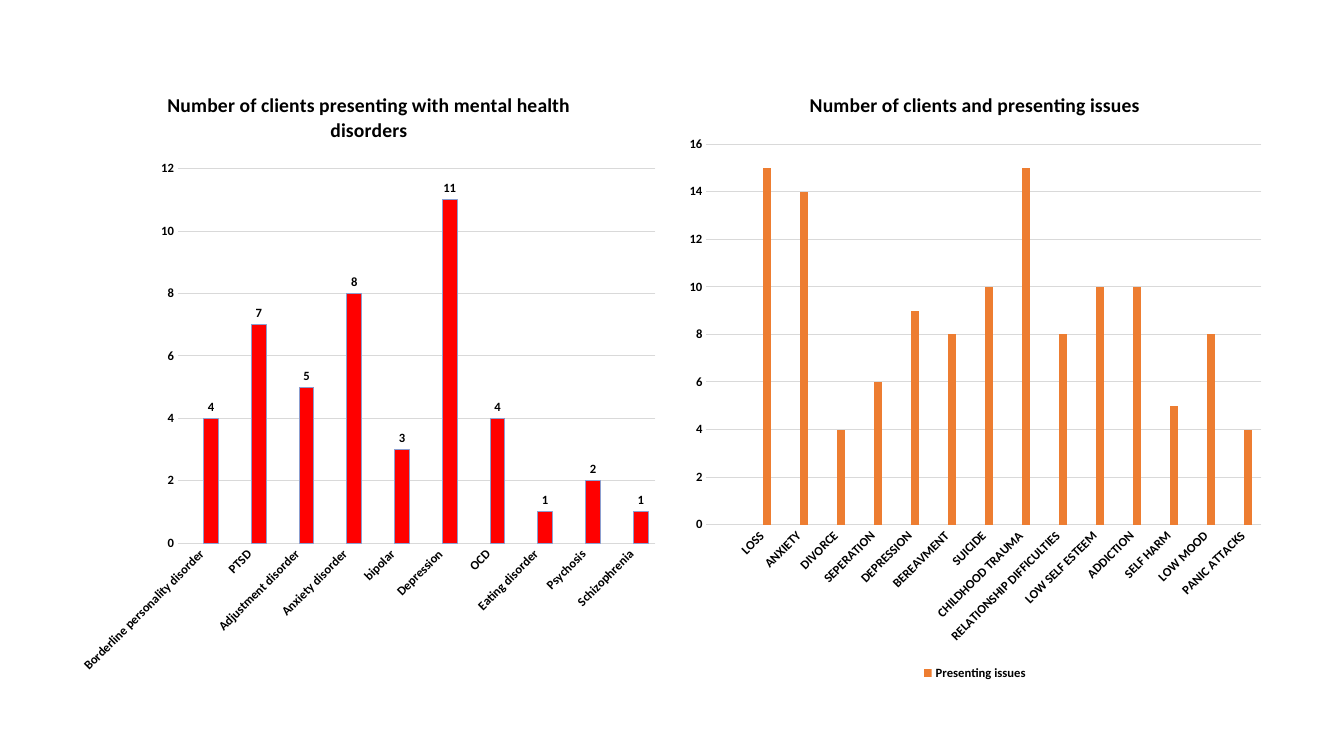
"""Build a slide with two column charts of client disorders and presenting issues."""
import pptx
import pptx.chart.data
import pptx.dml.color
import pptx.enum.chart
import pptx.oxml
import pptx.oxml.ns
import pptx.util

COLORS = {"text": "000000", "grid": "D9D9D9", "red": "FF0000", "orange": "ED7D31",
          "blue": "97A5CF", "outline": "8C9ECF"}
FONT = "Calibri"


def color(name):
    return pptx.dml.color.RGBColor.from_string(COLORS[name])


def style(font, size, bold=True):
    font.name, font.size, font.bold = FONT, pptx.util.Pt(size), bold
    font.color.rgb = color("text")


disorders = {"Borderline personality disorder": 4, "PTSD": 7, "Adjustment disorder": 5,
             "Anxiety disorder": 8, "bipolar": 3, "Depression": 11, "OCD": 4,
             "Eating disorder": 1, "Psychosis": 2, "Schizophrenia": 1}
issues = {"": None, "LOSS": 15, "ANXIETY": 14, "DIVORCE": 4, "SEPERATION": 6,
          "DEPRESSION": 9, "BEREAVMENT": 8, "SUICIDE": 10, "CHILDHOOD TRAUMA": 15,
          "RELATIONSHIP DIFFICULTIES": 8, "LOW SELF ESTEEM": 10, "ADDICTION": 10,
          "SELF HARM": 5, "LOW MOOD": 8, "PANIC ATTACKS": 4}
panels = [
    dict(title="Number of clients presenting with mental health disorders", counts=disorders,
         empty_series="Series 1", fills=("blue", "red"), outline="outline", gap=100,
         overlap=-24, top_value=12, labels=True, legend=False, plot=(0.18, 0.16, 0.8, 0.61)),
    dict(title="Number of clients and presenting issues", counts=issues,
         empty_series="Presenting issues", fills=("orange", "orange"), outline=None, gap=219,
         overlap=-27, top_value=16, labels=False, legend=True, plot=(0.05, 0.12, 0.93, 0.62)),
]

deck = pptx.Presentation()
deck.slide_width, deck.slide_height = pptx.util.Inches(13.33), pptx.util.Inches(7.5)
slide = deck.slides.add_slide(deck.slide_layouts[6])
margin, panel_width, panel_height, pitch = map(pptx.util.Inches, (0.7, 5.92, 6.09, 6.01))

for column, panel in enumerate(panels):
    counts = panel["counts"]
    data = pptx.chart.data.CategoryChartData()
    data.categories = list(counts)
    data.add_series(panel["empty_series"], [None] * len(counts))
    data.add_series("Series 2", list(counts.values()))
    chart = slide.shapes.add_chart(
        pptx.enum.chart.XL_CHART_TYPE.COLUMN_CLUSTERED,
        margin + column * pitch, margin, panel_width, panel_height, data).chart
    style(chart.font, 10, False)

    chart.has_title = True
    title = chart.chart_title.text_frame.paragraphs[0].add_run()
    title.text = panel["title"]
    style(title.font, 14)
    chart.chart_title.include_in_layout = False

    bars = chart.plots[0]
    bars.gap_width, bars.overlap = panel["gap"], panel["overlap"]
    bars.vary_by_categories = False
    for series, fill in zip(bars.series, panel["fills"]):
        series.format.fill.solid()
        series.format.fill.fore_color.rgb = color(fill)
        series.invert_if_negative = False
        if panel["outline"]:
            series.format.line.color.rgb = color(panel["outline"])
            series.format.line.width = pptx.util.Pt(0.75)
        if panel["labels"]:
            series.data_labels.show_value = True
            series.data_labels.position = pptx.enum.chart.XL_LABEL_POSITION.OUTSIDE_END
            style(series.data_labels.font, 9)

    for axis in (chart.category_axis, chart.value_axis):
        axis.major_tick_mark = axis.minor_tick_mark = pptx.enum.chart.XL_TICK_MARK.NONE
        style(axis.tick_labels.font, 9)
    chart.value_axis.minimum_scale, chart.value_axis.major_unit = 0, 2
    chart.value_axis.maximum_scale = panel["top_value"]
    chart.value_axis.format.line.fill.background()
    for line in (chart.category_axis.format.line, chart.value_axis.major_gridlines.format.line):
        line.color.rgb = color("grid")
        line.width = pptx.util.Pt(0.75)
    slant = chart.category_axis._element.find(".//" + pptx.oxml.ns.qn("a:bodyPr"))
    slant.set("rot", "-2700000")
    slant.set("vert", "horz")

    chart.has_legend = panel["legend"]
    if panel["legend"]:
        chart.legend.position = pptx.enum.chart.XL_LEGEND_POSITION.BOTTOM
        chart.legend.include_in_layout = False
        style(chart.legend.font, 9)
        chart.legend._element.find(pptx.oxml.ns.qn("c:legendPos")).addnext(pptx.oxml.parse_xml(
            f'<c:legendEntry {pptx.oxml.ns.nsdecls("c")}>'
            '<c:idx val="1"/><c:delete val="1"/></c:legendEntry>'))

    plot_area = chart._chartSpace.find(".//" + pptx.oxml.ns.qn("c:plotArea"))
    for old_layout in plot_area.findall(pptx.oxml.ns.qn("c:layout")):
        plot_area.remove(old_layout)
    shares = "".join(f'<c:{side} val="{share}"/>' for side, share in zip("xywh", panel["plot"]))
    plot_area.insert(0, pptx.oxml.parse_xml(
        f'<c:layout {pptx.oxml.ns.nsdecls("c")}><c:manualLayout><c:layoutTarget val="inner"/>'
        f'<c:xMode val="edge"/><c:yMode val="edge"/>{shares}</c:manualLayout></c:layout>'))

deck.save("out.pptx")
